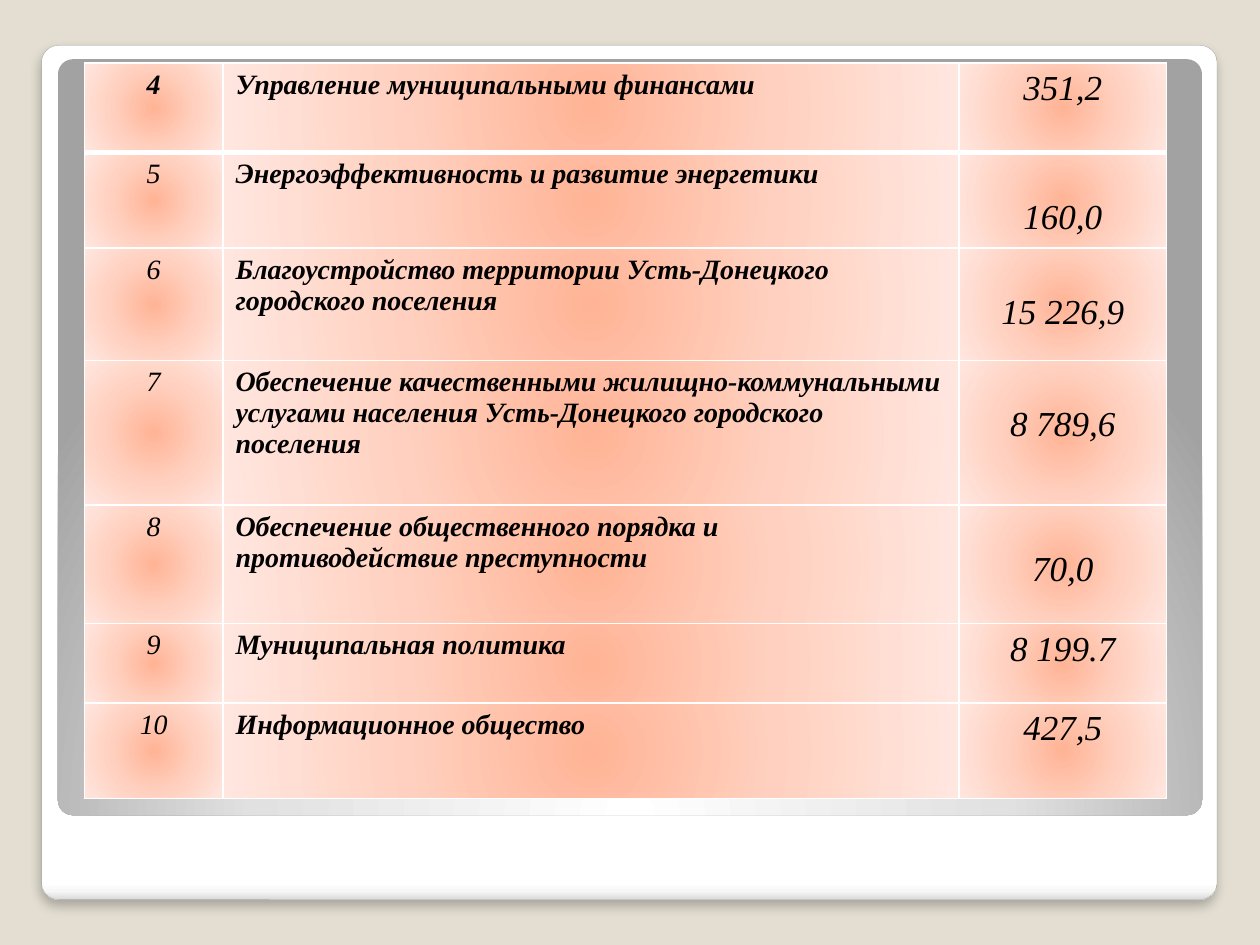
"""Build a slide with a table of municipal programmes and their funding."""
import pptx
import pptx.dml.color
import pptx.enum.shapes
import pptx.enum.text
import pptx.oxml
import pptx.oxml.ns
import pptx.util
from pptx.util import Inches

RGBColor = pptx.dml.color.RGBColor
BACKGROUND = RGBColor(0xE3, 0xDE, 0xD1)
OUTLINE = RGBColor(0xA4, 0xA4, 0xA4)
WHITE = RGBColor(0xFF, 0xFF, 0xFF)
BLACK = RGBColor(0, 0, 0)
SHADE = RGBColor(0xF7, 0xF7, 0xF7)
EDGE = RGBColor(0xDA, 0xDA, 0xDA)
SILVER = RGBColor(0xE1, 0xE1, 0xE1)
GRAY = RGBColor(0xA2, 0xA2, 0xA2)
PEACH = RGBColor(0xFF, 0xB4, 0x96)
LIGHT_PEACH = RGBColor(0xFF, 0xD0, 0xBF)
PALE_PEACH = RGBColor(0xFF, 0xE7, 0xE0)
NAMESPACE = pptx.oxml.ns.nsdecls("a")

CARD_STOPS = [(0, WHITE), (98, WHITE), (99, SHADE), (100, EDGE)]
PANEL_STOPS = [(0, WHITE), (55, SILVER), (100, GRAY)]
CELL_STOPS = [(0, PEACH), (50, LIGHT_PEACH), (100, PALE_PEACH)]
LINEAR = '<a:lin ang="5400000" scaled="0"/>'
RADIAL = ('<a:path path="circle"><a:fillToRect l="50000" t="{}" '
          'r="50000" b="{}"/></a:path>')

ROWS = [
    ("4", "Управление муниципальными финансами", "351,2", 0.71, False),
    ("5", "Энергоэффективность и развитие энергетики", "160,0", 0.76, True),
    ("6", "Благоустройство территории Усть-Донецкого городского поселения",
     "15 226,9", 0.89, True),
    ("7", "Обеспечение качественными жилищно-коммунальными услугами населения "
     "Усть-Донецкого городского поселения", "8 789,6", 1.15, True),
    ("8", "Обеспечение общественного порядка и противодействие преступности",
     "70,0", 0.94, True),
    ("9", "Муниципальная политика", "8 199.7", 0.63, False),
    ("10", "Информационное общество", "427,5", 0.76, False),
]
COLUMN_WIDTHS = [1.1, 5.84, 1.65]


def gradient(stops, direction):
    stop_xml = "".join(
        f'<a:gs pos="{position * 1000}"><a:srgbClr val="{color}"/></a:gs>'
        for position, color in stops)
    return pptx.oxml.parse_xml(
        f'<a:gradFill {NAMESPACE} rotWithShape="1"><a:gsLst>{stop_xml}</a:gsLst>'
        f'{direction}</a:gradFill>')


def add_panel(slide, left, top, width, height, fill):
    shape = slide.shapes.add_shape(
        pptx.enum.shapes.MSO_SHAPE.ROUNDED_RECTANGLE,
        Inches(left), Inches(top), Inches(width), Inches(height))
    shape.adjustments[0] = 0.02
    shape.shadow.inherit = False
    shape.line.fill.background()
    shape._element.spPr.insert(2, fill)
    return shape


presentation = pptx.Presentation()
presentation.slide_width = Inches(10)
presentation.slide_height = Inches(7.5)
slide = presentation.slides.add_slide(presentation.slide_layouts[6])
slide.background.fill.solid()
slide.background.fill.fore_color.rgb = BACKGROUND

card = add_panel(slide, 0.33, 0.36, 9.33, 6.78, gradient(CARD_STOPS, LINEAR))
card.line.color.rgb = OUTLINE
card.line.width = pptx.util.Pt(0.16)
card._element.spPr.find(pptx.oxml.ns.qn("a:effectLst")).append(pptx.oxml.parse_xml(
    f'<a:outerShdw {NAMESPACE} blurRad="{pptx.util.Pt(6)}" dist="{pptx.util.Pt(4)}" '
    f'dir="5400000" algn="t" rotWithShape="0"><a:srgbClr val="{BLACK}">'
    '<a:alpha val="25000"/></a:srgbClr></a:outerShdw>'))
add_panel(slide, 0.46, 0.47, 9.08, 6,
          gradient(PANEL_STOPS, RADIAL.format(175000, -75000)))

table = slide.shapes.add_table(
    len(ROWS), len(COLUMN_WIDTHS), Inches(0.67), Inches(0.5),
    Inches(8.58), Inches(5.89)).table
table.first_row = False
table.horz_banding = False
for column, width in zip(table.columns, COLUMN_WIDTHS):
    column.width = Inches(width)

for row_index, (number, programme, amount, height, lowered) in enumerate(ROWS):
    table.rows[row_index].height = Inches(height)
    for column_index, text in enumerate((number, programme, amount)):
        is_programme = column_index == 1
        is_amount = column_index == 2
        cell = table.cell(row_index, column_index)
        cell.margin_top = Inches(0.36 if is_amount and lowered else 0.05)
        paragraph = cell.text_frame.paragraphs[0]
        if not is_programme:
            paragraph.alignment = pptx.enum.text.PP_ALIGN.CENTER
        run = paragraph.add_run()
        run.text = text
        run.font.name = "Times New Roman"
        run.font.size = pptx.util.Pt(20 if is_amount else 16)
        run.font.bold = is_programme or (row_index == 0 and not is_amount)
        run.font.italic = True
        run.font.color.rgb = BLACK

        properties = cell._tc.get_or_add_tcPr()
        for side in "LRTB":
            thick = (side, row_index) in (("B", 0), ("T", 1))
            properties.append(pptx.oxml.parse_xml(
                f'<a:ln{side} {NAMESPACE} w="{pptx.util.Pt(3 if thick else 1)}">'
                f'<a:solidFill><a:srgbClr val="{WHITE}"/></a:solidFill></a:ln{side}>'))
        properties.append(gradient(CELL_STOPS, RADIAL.format(50000, 50000)))

presentation.save("out.pptx")
